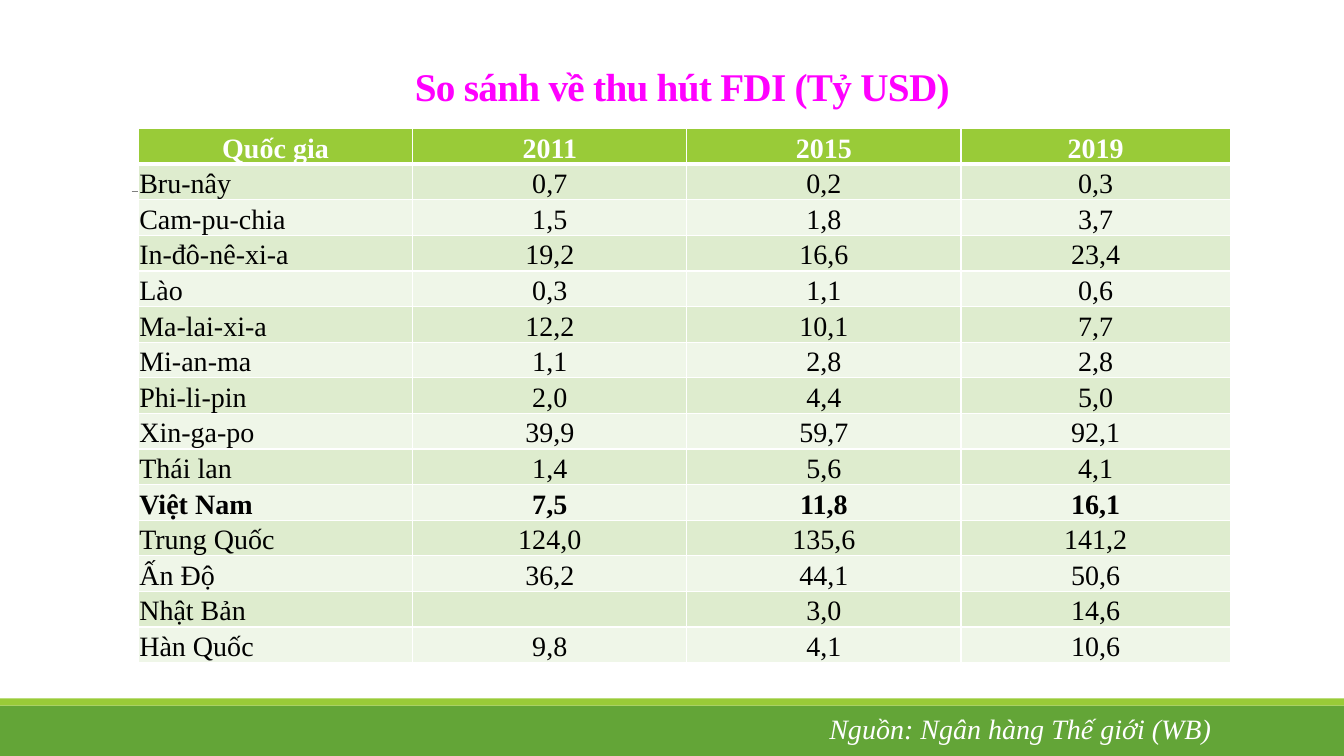
"""Build a slide that compares FDI inflows by country."""
import pptx
import pptx.dml.color
import pptx.enum.shapes
import pptx.enum.text
import pptx.oxml
import pptx.oxml.ns
import pptx.util

Cm = pptx.util.Cm
Pt = pptx.util.Pt
RGBColor = pptx.dml.color.RGBColor
ALIGN = pptx.enum.text.PP_ALIGN
ANCHOR = pptx.enum.text.MSO_ANCHOR

WHITE = RGBColor(0xFF, 0xFF, 0xFF)
BLACK = RGBColor(0x00, 0x00, 0x00)
PINK = RGBColor(0xFF, 0x00, 0xFF)
GREY = RGBColor(0x80, 0x80, 0x80)
GREEN = RGBColor(0x63, 0xA5, 0x37)
LIME = RGBColor(0x99, 0xCB, 0x38)
BANDS = (RGBColor(0xEF, 0xF6, 0xE8), RGBColor(0xDE, 0xEC, 0xCE))
FONT = "Times New Roman"

WIDTH, HEIGHT = 33.87, 19.05
COLS = (6.91, 6.91, 6.91, 6.78)
HOME = "Việt Nam"
ROWS = (
    ("Quốc gia", "2011", "2015", "2019"),
    ("Bru-nây", "0,7", "0,2", "0,3"),
    ("Cam-pu-chia", "1,5", "1,8", "3,7"),
    ("In-đô-nê-xi-a", "19,2", "16,6", "23,4"),
    ("Lào", "0,3", "1,1", "0,6"),
    ("Ma-lai-xi-a", "12,2", "10,1", "7,7"),
    ("Mi-an-ma", "1,1", "2,8", "2,8"),
    ("Phi-li-pin", "2,0", "4,4", "5,0"),
    ("Xin-ga-po", "39,9", "59,7", "92,1"),
    ("Thái lan", "1,4", "5,6", "4,1"),
    (HOME, "7,5", "11,8", "16,1"),
    ("Trung Quốc", "124,0", "135,6", "141,2"),
    ("Ấn Độ", "36,2", "44,1", "50,6"),
    ("Nhật Bản", "", "3,0", "14,6"),
    ("Hàn Quốc", "9,8", "4,1", "10,6"),
)


def write(frame, text, size=20, color=BLACK, bold=False, slant=False,
          align=ALIGN.LEFT, lead=None, track=None):
    """Write one formatted line into a text frame."""
    para = frame.paragraphs[0]
    para.alignment = align
    if lead:
        para.line_spacing = lead
    run = para.add_run()
    run.text = text
    font = run.font
    font.name, font.size = FONT, Pt(size)
    font.bold, font.italic = bold, slant
    font.color.rgb = color
    if track:
        font._element.set("spc", str(track))


def add_bar(slide, left, top, width, height, color):
    """Draw a plain filled bar."""
    bar = slide.shapes.add_shape(
        pptx.enum.shapes.MSO_SHAPE.RECTANGLE,
        Cm(left), Cm(top), Cm(width), Cm(height))
    bar.shadow.inherit = False
    bar.fill.solid()
    bar.fill.fore_color.rgb = color
    bar.line.fill.background()


def add_rule(slide, left, top, width):
    """Draw the thin level rule."""
    rule = slide.shapes.add_connector(
        pptx.enum.shapes.MSO_CONNECTOR.STRAIGHT,
        Cm(left), Cm(top), Cm(left + width), Cm(top))
    rule.line.color.rgb = GREY
    rule.line.width = Pt(0.5)
    rule._element.spPr.append(
        pptx.oxml.parse_xml(f'<a:effectLst {pptx.oxml.ns.nsdecls("a")}/>'))


def add_title(slide, left, top, width, height):
    """Place the heading on its white box."""
    box = slide.shapes.add_textbox(Cm(left), Cm(top), Cm(width), Cm(height))
    box.fill.solid()
    box.fill.fore_color.rgb = WHITE
    frame = box.text_frame
    frame.word_wrap = True
    frame.vertical_anchor = ANCHOR.BOTTOM
    write(frame, "So sánh về thu hút FDI (Tỷ USD)", size=28, color=PINK,
          bold=True, align=ALIGN.CENTER, lead=1.5, track=-50)


def add_edge(cell, side, width):
    """Give one side of a cell a white border."""
    cell._tc.get_or_add_tcPr().append(pptx.oxml.parse_xml(
        f'<a:ln{side} {pptx.oxml.ns.nsdecls("a")} w="{Pt(width)}">'
        f'<a:solidFill><a:srgbClr val="{WHITE}"/></a:solidFill></a:ln{side}>'))


def fill_cell(cell, text, row, col, bold):
    """Style one table cell by its row and column, and write its text."""
    cell.margin_left = cell.margin_right = cell.margin_top = Cm(0.02)
    cell.margin_bottom = 0
    cell.vertical_anchor = ANCHOR.BOTTOM
    head = row == 0
    for side in "LRTB":
        thick = (row, side) in ((0, "B"), (1, "T"))
        add_edge(cell, side, 3 if thick else 1)
    cell.fill.solid()
    cell.fill.fore_color.rgb = LIME if head else BANDS[row % 2]
    write(cell.text_frame, text, color=WHITE if head else BLACK,
          bold=head or bold,
          align=ALIGN.CENTER if head or col else ALIGN.LEFT)


def add_grid(slide, left, top, height):
    """Place the table of inflows."""
    table = slide.shapes.add_table(
        len(ROWS), len(COLS), Cm(left), Cm(top),
        Cm(sum(COLS)), Cm(height)).table
    for col, width in enumerate(COLS):
        table.columns[col].width = Cm(width)
    for row, texts in enumerate(ROWS):
        table.rows[row].height = Cm(height / len(ROWS))
        for col, text in enumerate(texts):
            fill_cell(table.cell(row, col), text, row, col, texts[0] == HOME)


def add_source(slide, left, top, width, height):
    """Place the source line on the footer."""
    box = slide.shapes.add_textbox(Cm(left), Cm(top), Cm(width), Cm(height))
    box.text_frame.word_wrap = False
    write(box.text_frame, "Nguồn: Ngân hàng Thế giới (WB)",
          color=WHITE, slant=True)


def main():
    """Build and save the deck."""
    deck = pptx.Presentation()
    deck.slide_width, deck.slide_height = Cm(WIDTH), Cm(HEIGHT)
    slide = deck.slides.add_slide(deck.slide_layouts[6])
    add_bar(slide, 0, 17.78, WIDTH, 1.27, GREEN)
    add_bar(slide, 0, 17.6, WIDTH, 0.18, LIME)
    add_rule(slide, 3.32, 4.83, 27.69)
    add_title(slide, 2.46, 0.71, 29.46, 2.16)
    add_grid(slide, 3.49, 3.24, 13.46)
    add_source(slide, 20.65, 17.81, 10.21, 1.12)
    deck.save("out.pptx")


if __name__ == "__main__":
    main()
